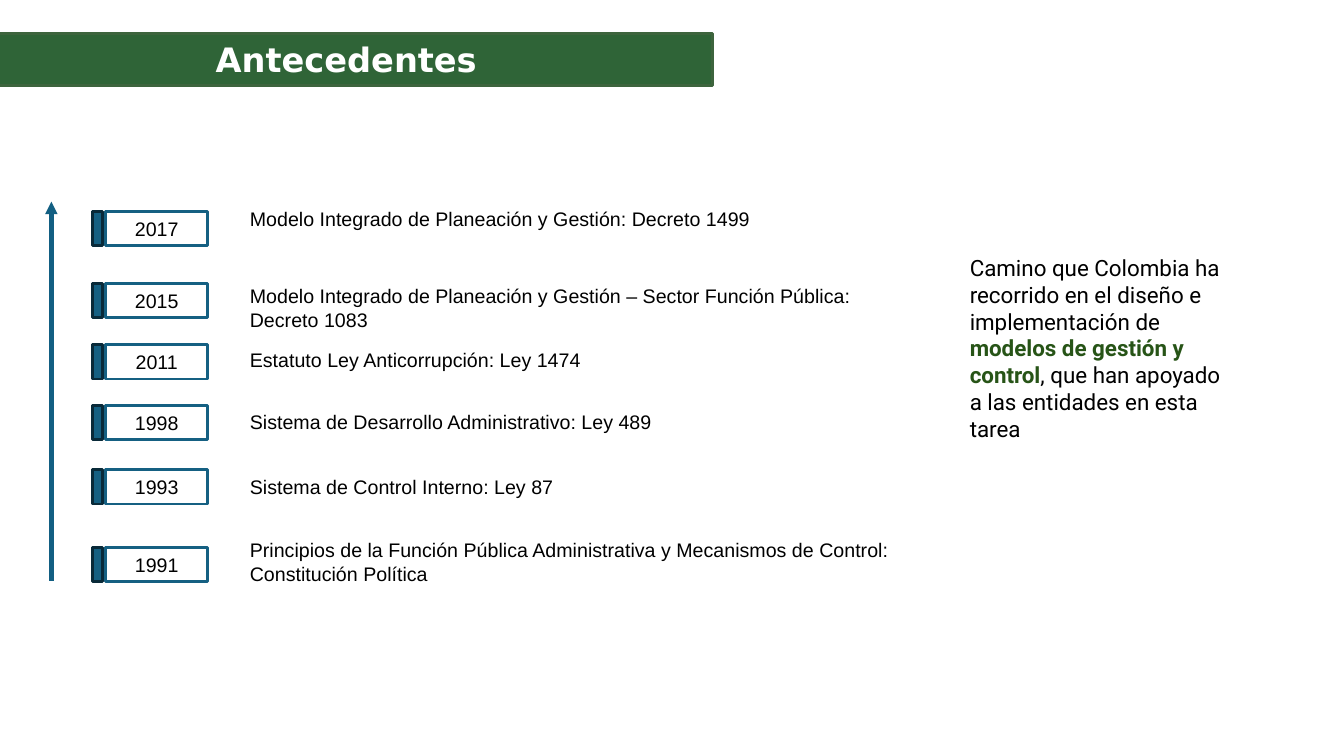
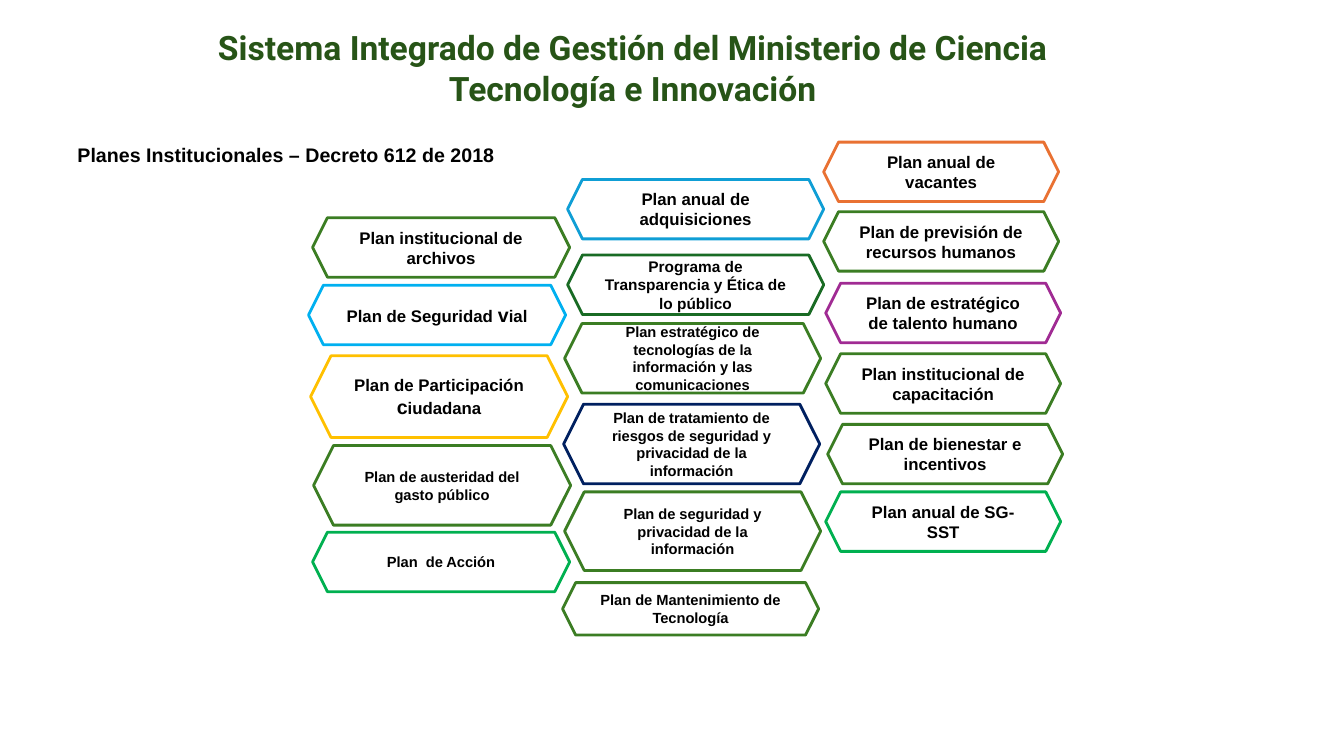
from dataclasses import dataclass

from lxml import etree
from pptx import Presentation
from pptx.dml.color import RGBColor
from pptx.enum import shapes, text
from pptx.oxml import ns
from pptx.util import Inches, Pt


@dataclass(frozen=True)
class Theme:
    white: str = "FFFFFF"
    ink: str = "000000"
    heading: str = "275417"
    banner: str = "2F6437"
    banner_edge: str = "3D643D"
    blue: str = "156082"
    blue_edge: str = "092A39"
    arrow: str = "125F82"
    green: str = "3B7D23"
    dark_green: str = "196B24"
    bright_green: str = "00B050"
    sky: str = "0F9ED5"
    cyan: str = "00B0F0"
    purple: str = "A02B93"
    orange: str = "E97132"
    gold: str = "FFC000"
    navy: str = "002060"
    body_font: str = "Arial"
    text_font: str = "Roboto"
    banner_font: str = "DejaVu Sans"
    title_size: float = 24
    lead_size: float = 16
    body_size: float = 14
    plan_size: float = 12
    medium_size: float = 11
    small_size: float = 10.5
    outline: float = 2
    arrow_width: float = 3


T = Theme()
TITLE_ONLY = 5
CENTER = text.PP_ALIGN.CENTER
LEFT = text.PP_ALIGN.LEFT
TOP = text.MSO_ANCHOR.TOP
MIDDLE = text.MSO_ANCHOR.MIDDLE
RECTANGLE = shapes.MSO_SHAPE.RECTANGLE
HEXAGON = shapes.MSO_SHAPE.HEXAGON

YEAR_HEIGHT = 0.34
# year, top of its box, top of its description, description
MILESTONES = [
    ("2017", 2.1, 2, "Modelo Integrado de Planeación y Gestión: Decreto 1499"),
    ("2015", 2.81, 2.77, "Modelo Integrado de Planeación y Gestión – Sector "
                         "Función Pública: Decreto 1083"),
    ("2011", 3.42, 3.4, "Estatuto Ley Anticorrupción: Ley 1474"),
    ("1998", 4.02, 4.02, "Sistema de Desarrollo Administrativo: Ley 489"),
    ("1993", 4.66, 4.66, "Sistema de Control Interno: Ley 87"),
    ("1991", 5.43, 5.29, "Principios de la Función Pública Administrativa y "
                         "Mecanismos de Control: Constitución Política"),
]

PLAN_HEIGHT = 0.59
BIG = {"size": T.body_size}
# for each column its width, then left, top, height, outline, text size, runs
PLAN_COLUMNS = [
    (2.55, [
        (3.1, 2.16, PLAN_HEIGHT, T.green, T.plan_size,
         [("Plan institucional de archivos", {})]),
        (3.06, 2.83, PLAN_HEIGHT, T.cyan, T.plan_size,
         [("Plan de Seguridad ", {}), ("v", BIG), ("ial", {})]),
        (3.08, 3.53, 0.81, T.gold, T.plan_size,
         [("Plan de Participación ", {}), ("c", BIG), ("iudadana", {})]),
        (3.11, 4.42, 0.79, T.green, T.small_size,
         [("Plan de austeridad del gasto público", {})]),
        (3.1, 5.28, PLAN_HEIGHT, T.bright_green, T.small_size,
         [("Plan  de Acción", {})]),
    ]),
    (2.54, [
        (5.63, 1.78, PLAN_HEIGHT, T.sky, T.plan_size,
         [("Plan anual de adquisiciones", {})]),
        (5.63, 2.53, PLAN_HEIGHT, T.dark_green, T.medium_size,
         [("Programa de Transparencia y Ética de lo público", {})]),
        (5.6, 3.21, 0.69, T.green, T.small_size,
         [("Plan estratégico de tecnologías de la información y las "
           "comunicaciones", {})]),
        (5.59, 4.01, 0.79, T.navy, T.small_size,
         [("Plan de tratamiento de riesgos de seguridad y privacidad de la "
           "información", {})]),
        (5.6, 4.88, 0.78, T.green, T.small_size,
         [("Plan de seguridad y privacidad de la información", {})]),
        (5.58, 5.78, 0.52, T.green, T.small_size,
         [("Plan de Mantenimiento de Tecnología", {})]),
    ]),
    (2.33, [
        (8.17, 1.41, PLAN_HEIGHT, T.orange, T.plan_size,
         [("Plan anual de vacantes", {})]),
        (8.17, 2.1, PLAN_HEIGHT, T.green, T.plan_size,
         [("Plan de previsión de recursos humanos", {})]),
        (8.19, 2.81, PLAN_HEIGHT, T.purple, T.plan_size,
         [("Plan de estratégico de talento humano", {})]),
        (8.19, 3.51, PLAN_HEIGHT, T.green, T.plan_size,
         [("Plan institucional de capacitación", {})]),
        (8.21, 4.21, PLAN_HEIGHT, T.green, T.plan_size,
         [("Plan de bienestar e incentivos", {})]),
        (8.19, 4.88, PLAN_HEIGHT, T.bright_green, T.plan_size,
         [("Plan anual de SG-SST", {})]),
    ]),
]


def inches(box):
    return [Inches(value) for value in box]


def write(shape, runs, align=LEFT, anchor=TOP, **base):
    """Fill a shape with one paragraph of (words, format changes) runs."""
    frame = shape.text_frame
    frame.word_wrap = True
    frame.auto_size = text.MSO_AUTO_SIZE.NONE
    frame.vertical_anchor = anchor
    paragraph = frame.paragraphs[0]
    paragraph.alignment = align
    defaults = {"name": T.body_font, "size": T.body_size, "bold": False,
                "color": T.ink}
    for words, changes in runs:
        run = paragraph.add_run()
        run.text = words
        style = {**defaults, **base, **changes}
        run.font.color.rgb = RGBColor.from_string(style.pop("color"))
        style["size"] = Pt(style["size"])
        for attribute, value in style.items():
            setattr(run.font, attribute, value)


def paint(shape, fill, edge):
    shape.shadow.inherit = False
    shape.fill.solid()
    shape.fill.fore_color.rgb = RGBColor.from_string(fill)
    shape.line.color.rgb = RGBColor.from_string(edge)
    shape.line.width = Pt(T.outline)


def add_box(slide, preset, box, fill, edge):
    shape = slide.shapes.add_shape(preset, *inches(box))
    paint(shape, fill, edge)
    return shape


def add_label(slide, box, runs, **style):
    write(slide.shapes.add_textbox(*inches(box)), runs, **style)


def add_titled_slide(deck, box, words, **style):
    slide = deck.slides.add_slide(deck.slide_layouts[TITLE_ONLY])
    title = slide.shapes.title
    title.left, title.top, title.width, title.height = inches(box)
    write(title, [(words, {})], align=CENTER, size=T.title_size, bold=True,
          **style)
    return slide


def make_banner(title):
    """Turn a title placeholder into a filled, rounded band."""
    geometry = etree.Element(ns.qn("a:prstGeom"), prst="roundRect")
    etree.SubElement(geometry, ns.qn("a:avLst"))
    title.element.spPr.insert(1, geometry)
    paint(title, T.banner, T.banner_edge)


def add_time_arrow(slide, x, bottom, top):
    arrow = slide.shapes.add_connector(shapes.MSO_CONNECTOR.STRAIGHT,
                                       *inches((x, bottom, x, top)))
    arrow.line.color.rgb = RGBColor.from_string(T.arrow)
    arrow.line.width = Pt(T.arrow_width)
    etree.SubElement(arrow.line._get_or_add_ln(), ns.qn("a:tailEnd"),
                     type="triangle")
    etree.SubElement(arrow.element.spPr, ns.qn("a:effectLst"))


def add_milestone(slide, year, year_top, label_top, description):
    year_box = add_box(slide, RECTANGLE, (1.05, year_top, 1.01, YEAR_HEIGHT),
                       T.white, T.blue)
    write(year_box, [(year, {})], align=CENTER, anchor=MIDDLE)
    add_box(slide, RECTANGLE, (0.92, year_top, 0.1, YEAR_HEIGHT),
            T.blue, T.blue_edge)
    add_label(slide, (2.38, label_top, 6.54, YEAR_HEIGHT), [(description, {})])


def add_plan(slide, width, left, top, height, edge, size, runs):
    plan = add_box(slide, HEXAGON, (left, top, width, height), T.white, edge)
    write(plan, runs, align=CENTER, anchor=MIDDLE, size=size, bold=True)


def build_background(deck):
    slide = add_titled_slide(deck, (-0.2, 0.33, 7.27, 0.52), "Antecedentes",
                             anchor=MIDDLE, name=T.banner_font, color=T.white)
    make_banner(slide.shapes.title)
    for milestone in MILESTONES:
        add_milestone(slide, *milestone)
    add_time_arrow(slide, 0.51, 5.76, 2)
    add_label(slide, (9.52, 2.47, 2.76, 1.99), [
        ("Camino que Colombia ha recorrido en el diseño e implementación de ",
         {}),
        ("modelos de gestión y control", {"color": T.heading, "bold": True}),
        (", que han apoyado a las entidades en esta tarea", {}),
    ], name=T.text_font, size=T.lead_size)


def build_plans(deck):
    slide = add_titled_slide(
        deck, (1.26, 0.22, 10.03, 0.91),
        "Sistema Integrado de Gestión del Ministerio de Ciencia Tecnología e "
        "Innovación", name=T.text_font, color=T.heading)
    for width, plans in PLAN_COLUMNS:
        for plan in plans:
            add_plan(slide, width, *plan)
    add_label(slide, (0.67, 1.33, 4.5, 0.41),
              [("Planes Institucionales – Decreto 612 de 2018", {})],
              anchor=MIDDLE, bold=True)


def main():
    deck = Presentation()
    deck.slide_width, deck.slide_height = inches((13.33, 7.5))
    build_background(deck)
    build_plans(deck)
    deck.save("out.pptx")


if __name__ == "__main__":
    main()
